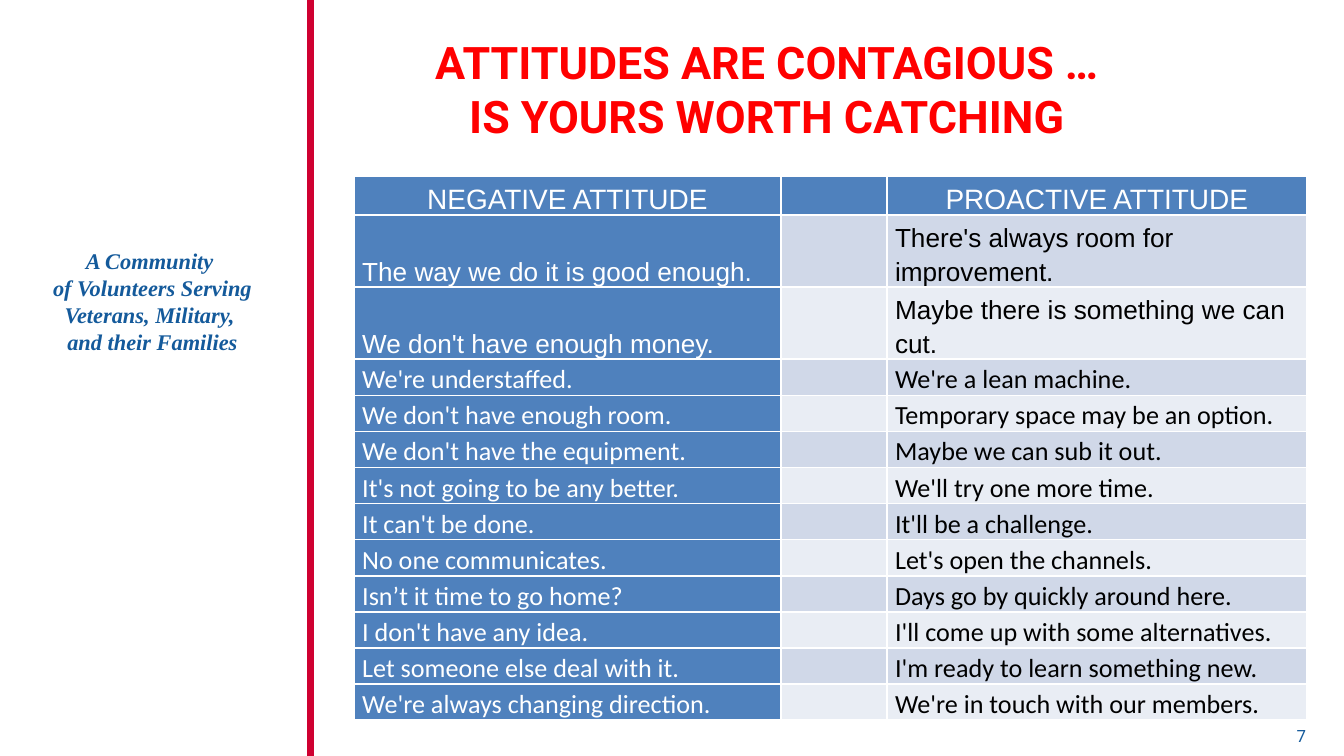
from dataclasses import dataclass

from lxml import etree
from pptx import Presentation
from pptx.dml.color import RGBColor
from pptx.enum import shapes, text
from pptx.oxml import ns
from pptx.util import Pt

PX = 4572  # EMU per px, 200 px to the inch


@dataclass(frozen=True)
class Theme:
    white: str = "FFFFFF"
    black: str = "000000"
    red: str = "CF0031"
    title_red: str = "FF0000"
    navy: str = "145A9B"
    blue: str = "4F81BD"
    bands: tuple = ("D0D8E8", "E9EDF4")
    title_size: int = 24
    motto_size: int = 12
    number_size: int = 9
    head_size: int = 15
    cell_size: int = 14


T = Theme()
CENTER, LEFT = text.PP_ALIGN.CENTER, text.PP_ALIGN.LEFT

HEADINGS = ("NEGATIVE ATTITUDE", "PROACTIVE ATTITUDE")
ATTITUDES = [
    ("The way we do it is good enough.", "There's always room for improvement."),
    ("We don't have enough money.", "Maybe there is something we can cut."),
    ("We're understaffed.", "We're a lean machine."),
    ("We don't have enough room.", "Temporary space may be an option."),
    ("We don't have the equipment.", "Maybe we can sub it out."),
    ("It's not going to be any better.", "We'll try one more time."),
    ("It can't be done.", "It'll be a challenge."),
    ("No one communicates.", "Let's open the channels."),
    ("Isn’t it time to go home?", "Days go by quickly around here."),
    ("I don't have any idea.", "I'll come up with some alternatives."),
    ("Let someone else deal with it.", "I'm ready to learn something new."),
    ("We're always changing direction.", "We're in touch with our members."),
]
ARIAL_ROWS = 2  # the first attitudes are in Arial, the rest in Calibri
COLUMNS = (635, 158, 625)
HEAD_HEIGHT, ROW_HEIGHT = 58, 52


def px(*values):
    return [v * PX for v in values]


def apply(target, formats):
    for name, value in formats.items():
        setattr(target, name, value)


def write(tf, words, color, align=LEFT, spacing=None, **font):
    """Fill the first paragraph; a newline becomes a line break."""
    p = tf.paragraphs[0]
    p.text = words
    apply(p, {"alignment": align, "line_spacing": spacing})
    for r in p.runs:
        apply(r.font, font)
        r.font.color.rgb = RGBColor.from_string(color)


def add_bar(s, box, color):
    sp = s.shapes.add_shape(shapes.MSO_SHAPE.RECTANGLE, *px(*box))
    sp.shadow.inherit = False
    sp.fill.solid()
    sp.fill.fore_color.rgb = RGBColor.from_string(color)
    sp.line.fill.background()


def add_label(s, box, words, **formats):
    tf = s.shapes.add_textbox(*px(*box)).text_frame
    tf.word_wrap = True
    write(tf, words, T.navy, **formats)


def set_title(s, box, words):
    sp = s.shapes.title
    apply(sp, dict(zip(("left", "top", "width", "height"), px(*box))))
    apply(sp.text_frame, {"word_wrap": True,
                          "auto_size": text.MSO_AUTO_SIZE.NONE,
                          "vertical_anchor": text.MSO_ANCHOR.MIDDLE})
    write(sp.text_frame, words, T.title_red, CENTER,
          name="Roboto", size=Pt(T.title_size), bold=True)


def set_borders(cell):
    tc_pr = cell._tc.get_or_add_tcPr()
    for i, side in enumerate(("lnL", "lnR", "lnT", "lnB")):
        ln = etree.Element(ns.qn(f"a:{side}"), w=str(Pt(1)))
        fill = etree.SubElement(ln, ns.qn("a:solidFill"))
        etree.SubElement(fill, ns.qn("a:srgbClr"), val=T.white)
        tc_pr.insert(i, ln)


def fill_cell(cell, words, fill, color, **formats):
    apply(cell, {"margin_left": 12 * PX, "margin_right": 12 * PX,
                 "margin_top": 0, "margin_bottom": 0,
                 "vertical_anchor": text.MSO_ANCHOR.BOTTOM})
    cell.fill.solid()
    cell.fill.fore_color.rgb = RGBColor.from_string(fill)
    set_borders(cell)
    if words:
        write(cell.text_frame, words, color, spacing=1.15, bold=False, **formats)
    else:  # a small end mark keeps an empty cell from stretching its row
        p = cell.text_frame.paragraphs[0]
        etree.SubElement(p._p, ns.qn("a:endParaRPr"), sz="1000")


def add_attitude_table(s, left, top):
    height = HEAD_HEIGHT + ROW_HEIGHT * len(ATTITUDES)
    table = s.shapes.add_table(len(ATTITUDES) + 1, len(COLUMNS),
                               *px(left, top, sum(COLUMNS), height)).table
    apply(table, {"first_row": False, "horz_banding": False})
    for column, width in zip(table.columns, COLUMNS):
        column.width = width * PX
    for i, row in enumerate(table.rows):
        row.height = (ROW_HEIGHT if i else HEAD_HEIGHT) * PX

    # Heading row
    for j, words in enumerate((HEADINGS[0], "", HEADINGS[1])):
        fill_cell(table.cell(0, j), words, T.blue, T.white,
                  align=CENTER, name="Arial", size=Pt(T.head_size))

    # Attitude rows: blue first column, banded others
    for i, (negative, proactive) in enumerate(ATTITUDES):
        font = {"name": "Arial" if i < ARIAL_ROWS else "Calibri",
                "size": Pt(T.cell_size)}
        band = T.bands[i % 2]
        cells = table.rows[i + 1].cells
        fill_cell(cells[0], negative, T.blue, T.white, **font)
        fill_cell(cells[1], "", band, T.black)
        fill_cell(cells[2], proactive, band, T.black, **font)


def main():
    prs = Presentation()
    prs.slide_width, prs.slide_height = px(2000, 1125)
    s = prs.slides.add_slide(prs.slide_layouts[5])

    # Side panel with its red edge
    add_bar(s, (-4, 0, 460, 1128), T.white)
    add_bar(s, (457, 0, 10, 1125), T.red)
    add_label(s, (58, 358, 338, 182),
              "A Community \nof Volunteers Serving Veterans, Military, \n"
              "and their Families",
              align=CENTER, name="Times New Roman", size=Pt(T.motto_size),
              bold=True, italic=True)

    # Slide number
    add_label(s, (1910, 1070, 90, 52), "7", name="Roboto", size=Pt(T.number_size))

    # Title and table
    set_title(s, (466, 32, 1350, 200),
              "ATTITUDES ARE CONTAGIOUS …\nIS YOURS WORTH CATCHING")
    add_attitude_table(s, 527, 262)

    prs.save("out.pptx")


if __name__ == "__main__":
    main()
